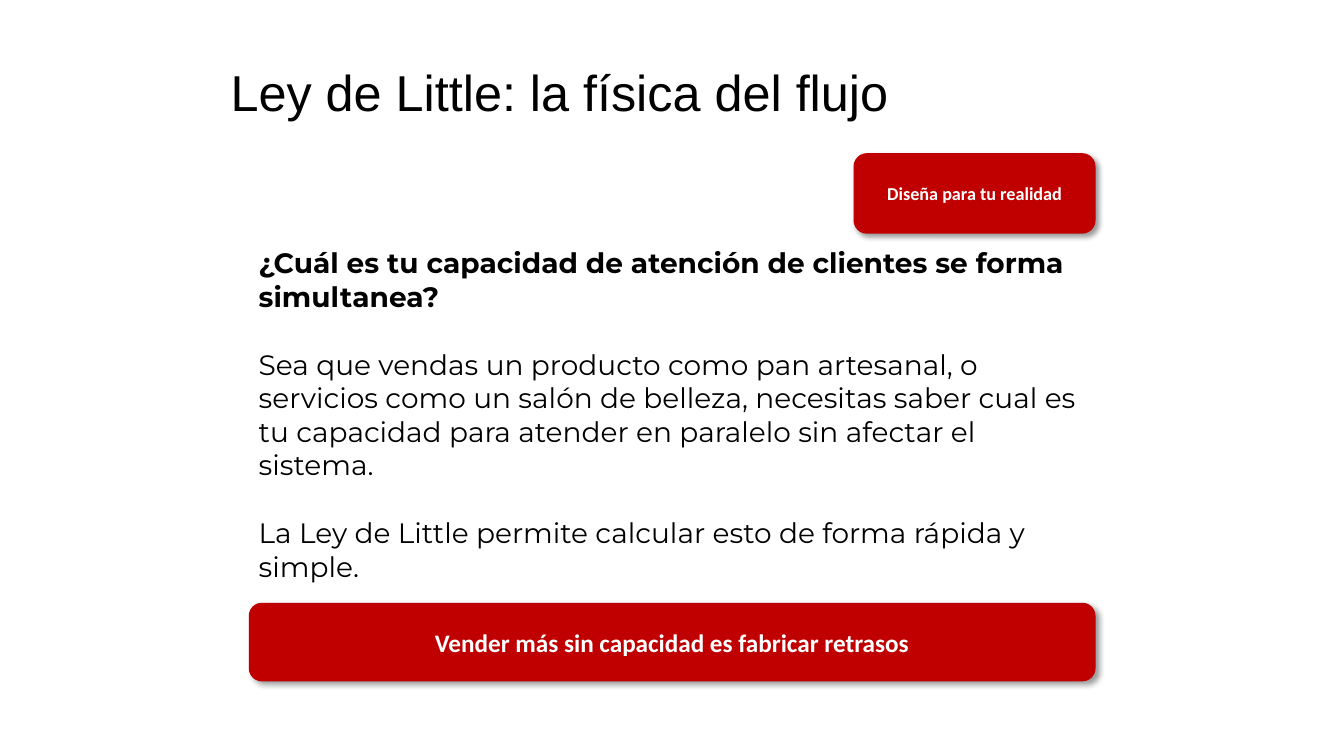
from lxml import etree
from pptx import Presentation
from pptx import util as u
from pptx.dml.color import RGBColor
from pptx.enum import shapes, text
from pptx.oxml import ns

BLACK = RGBColor(0x00, 0x00, 0x00)
WHITE = RGBColor(0xFF, 0xFF, 0xFF)
RED = RGBColor(0xC0, 0x00, 0x00)

CONTENT_LEFT = 6.27
CONTENT_WIDTH = 21.34
CONTENT_RIGHT = CONTENT_LEFT + CONTENT_WIDTH


class LessonSlide:
    title_font = "Arial"
    body_font = "Montserrat"
    button_font = "Calibri"

    def __init__(self, slide):
        self.slide = slide

    def style(self, paragraph, font, size, color, bold=False):
        paragraph.font.name = font
        paragraph.font.size = u.Pt(size)
        paragraph.font.color.rgb = color
        paragraph.font.bold = bold

    def text_frame(self, left, top, width, height):
        box = self.slide.shapes.add_textbox(u.Cm(left), u.Cm(top), u.Cm(width), u.Cm(height))
        box.text_frame.word_wrap = True
        return box.text_frame

    def title(self, wording, left, top, width, height):
        frame = self.text_frame(left, top, width, height)
        frame.vertical_anchor = text.MSO_ANCHOR.MIDDLE
        heading = frame.paragraphs[0]
        heading.text = wording
        heading.line_spacing = 0.9
        self.style(heading, self.title_font, 36, BLACK)

    def body(self, question, explanations, left, top, width, height):
        frame = self.text_frame(left, top, width, height)
        opening = frame.paragraphs[0]
        opening.text = question
        self.style(opening, self.body_font, 20, BLACK, bold=True)
        for explanation in explanations:
            paragraph = frame.add_paragraph()
            paragraph.text = explanation
            paragraph.space_before = u.Pt(24.3)
            self.style(paragraph, self.body_font, 20, BLACK)

    def banner(self, message, size, left, top, width, height):
        banner = self.slide.shapes.add_shape(
            shapes.MSO_SHAPE.ROUNDED_RECTANGLE,
            u.Cm(left), u.Cm(top), u.Cm(width), u.Cm(height))
        banner.fill.solid()
        banner.fill.fore_color.rgb = RED
        banner.line.fill.background()
        self.drop_shadow(banner)
        frame = banner.text_frame
        frame.word_wrap = True
        frame.vertical_anchor = text.MSO_ANCHOR.MIDDLE
        label = frame.paragraphs[0]
        label.text = message
        label.alignment = text.PP_ALIGN.CENTER
        self.style(label, self.button_font, size, WHITE, bold=True)

    def drop_shadow(self, shape):
        shape.shadow.inherit = False
        effects = shape.element.spPr.find(ns.qn("a:effectLst"))
        shadow = etree.SubElement(
            effects, ns.qn("a:outerShdw"), blurRad=str(u.Pt(4)), dist=str(u.Pt(3)),
            dir=str(45 * 60000), algn="tl", rotWithShape="0")
        color = etree.SubElement(shadow, ns.qn("a:srgbClr"), val=str(BLACK))
        etree.SubElement(color, ns.qn("a:alpha"), val="40000")


def main():
    deck = Presentation()
    deck.slide_width = u.Cm(33.87)
    deck.slide_height = u.Cm(19.05)
    lesson = LessonSlide(deck.slides.add_slide(deck.slide_layouts[6]))

    lesson.title("Ley de Little: la física del flujo", 5.56, 0.81, 19.23, 3.18)
    lesson.body(
        "¿Cuál es tu capacidad de atención de clientes se forma simultanea?",
        ["Sea que vendas un producto como pan artesanal, o servicios como un salón de "
         "belleza, necesitas saber cual es tu capacidad para atender en paralelo sin "
         "afectar el sistema.",
         "La Ley de Little permite calcular esto de forma rápida y simple."],
        CONTENT_LEFT, 6.07, CONTENT_WIDTH, 8.79)
    lesson.banner("Vender más sin capacidad es fabricar retrasos", 18,
                  CONTENT_LEFT, 15.19, CONTENT_WIDTH, 1.98)
    tag_width = 6.1
    lesson.banner("Diseña para tu realidad", 13,
                  CONTENT_RIGHT - tag_width, 3.86, tag_width, 2.03)
    deck.save("out.pptx")


if __name__ == "__main__":
    main()
